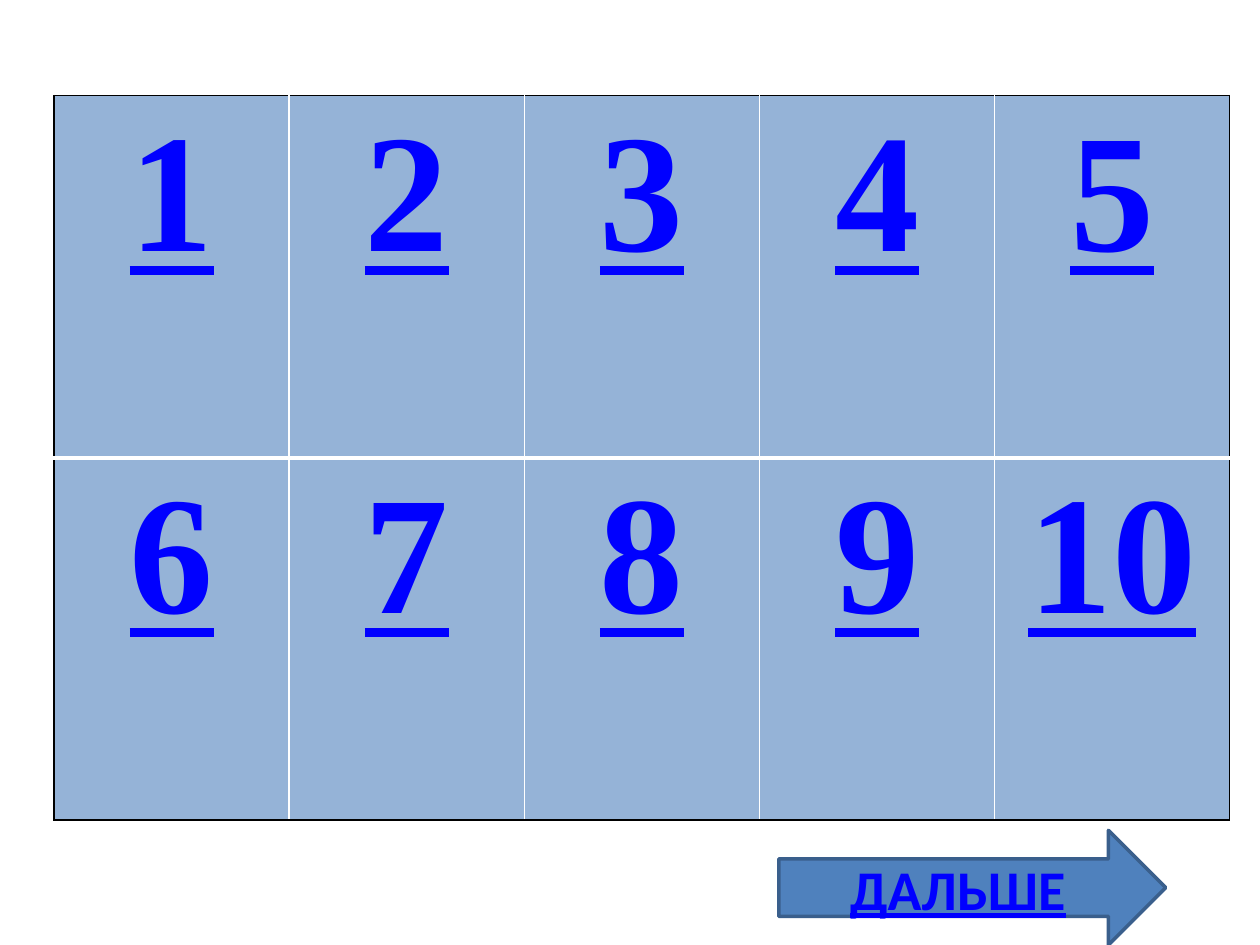
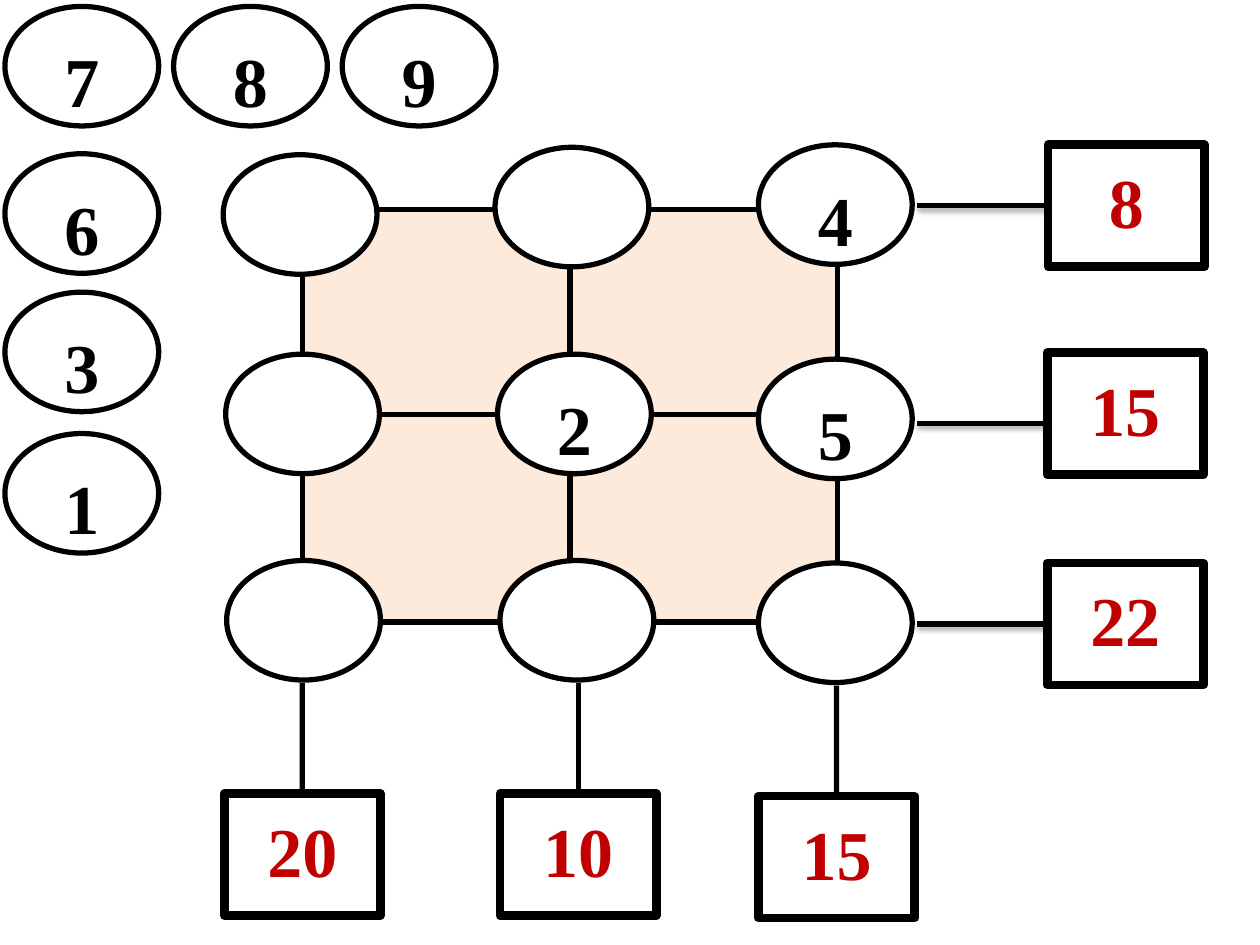
import pptx
import pptx.dml.color
import pptx.enum.shapes
import pptx.enum.text
import pptx.oxml
import pptx.oxml.ns
import pptx.util
from lxml import etree

Cm = pptx.util.Cm
Pt = pptx.util.Pt
Shape = pptx.enum.shapes.MSO_SHAPE
Anchor = pptx.enum.text.MSO_ANCHOR
qn = pptx.oxml.ns.qn

COLORS = {
    "black": "000000",
    "white": "FFFFFF",
    "link": "0000FF",
    "cell": "95B3D7",
    "arrow": "4F81BD",
    "arrow_edge": "3A5F8C",
    "tile": "FDEADA",
    "sum": "C00000",
}
SERIF = "Times New Roman"

# Sizes and places in centimetres: (left, top) and (width, height)
CIRCLE_SIZE = (3.1, 2.41)
BOX_SIZE = (3.15, 2.46)
TILE_SIZE = (5.38, 4.19)
GRID_CIRCLES = [
    ("", 4.5, 3.12), ("", 9.98, 2.97), ("4", 15.29, 2.92),
    ("", 4.55, 7.14), ("2", 10.03, 7.14), ("5", 15.29, 7.24),
    ("", 4.57, 11.3), ("", 10.08, 11.3), ("", 15.29, 11.35),
]
SPARE_TOP_ROW = "789"
SPARE_COLUMN = [("6", 3.1), ("3", 5.89), ("1", 8.74)]
# The last number is how far the line runs below the middle of the box
ROW_SUMS = [("8", 21.13, 2.92, 0), ("15", 21.11, 7.11, 0.19), ("22", 21.11, 11.35, 0)]
COLUMN_SUMS = [("20", 4.52, 16), ("10", 10.08, 16), ("15", 15.29, 16.05)]


def rgb(name):
    return pptx.dml.color.RGBColor.from_string(COLORS[name])


def write_text(frame, text, size=40, font=SERIF, color="black", underline=False):
    paragraph = frame.paragraphs[0]
    paragraph.alignment = pptx.enum.text.PP_ALIGN.CENTER
    run = paragraph.add_run()
    run.text = text
    run.font.name = font
    run.font.size = Pt(size)
    run.font.bold = True
    run.font.underline = underline
    run.font.color.rgb = rgb(color)


def add_figure(slide, kind, position, size, fill="white", edge="black", edge_width=3):
    shape = slide.shapes.add_shape(kind, *map(Cm, position + size))
    shape.shadow.inherit = False
    shape.fill.solid()
    shape.fill.fore_color.rgb = rgb(fill)
    shape.line.color.rgb = rgb(edge)
    shape.line.width = Pt(edge_width)
    return shape


def add_number(slide, kind, text, position, size, color="black", edge_width=3):
    """Draw a white figure with its number, if any, near the top."""
    shape = add_figure(slide, kind, position, size, edge_width=edge_width)
    if text:
        frame = shape.text_frame
        frame.vertical_anchor = Anchor.TOP
        frame.margin_top = Cm(0.28)
        frame.margin_bottom = 0
        write_text(frame, text, color=color)
    return shape


def add_circle(slide, text, left, top):
    return add_number(slide, Shape.OVAL, text, (left, top), CIRCLE_SIZE)


def add_sum_box(slide, text, left, top):
    return add_number(slide, Shape.RECTANGLE, text, (left, top), BOX_SIZE, "sum", 5)


def add_line(slide, begin, end, shadow=False):
    line = slide.shapes.add_connector(
        pptx.enum.shapes.MSO_CONNECTOR.STRAIGHT, *map(Cm, begin + end))
    line.line.color.rgb = rgb("black")
    line.line.width = Pt(3)
    effects = etree.SubElement(line._element.spPr, qn("a:effectLst"))
    if shadow:
        outer = etree.SubElement(effects, qn("a:outerShdw"), blurRad="40000",
                                 dist="23000", dir="5400000", rotWithShape="0")
        color = etree.SubElement(outer, qn("a:srgbClr"), val=COLORS["black"])
        etree.SubElement(color, qn("a:alpha"), val="35000")
    return line


def set_borders(cell, borders):
    """Set borders given as side: (color, points), sides in the order L, R, T, B."""
    properties = cell._tc.get_or_add_tcPr()
    for index, (side, (color, width)) in enumerate(borders.items()):
        border = etree.Element(qn(f"a:ln{side}"), w=str(Pt(width)))
        fill = etree.SubElement(border, qn("a:solidFill"))
        etree.SubElement(fill, qn("a:srgbClr"), val=COLORS[color])
        properties.insert(index, border)


def add_number_table(slide, rows=2, columns=5):
    table = slide.shapes.add_table(
        rows, columns, Cm(1.09), Cm(1.93), Cm(4.74 * columns), Cm(7.3 * rows)).table
    outer, inner, divider = ("black", 1), ("white", 1), ("white", 3)
    for row in range(rows):
        for column in range(columns):
            cell = table.cell(row, column)
            cell.fill.solid()
            cell.fill.fore_color.rgb = rgb("cell")
            set_borders(cell, {
                "L": outer if column == 0 else inner,
                "R": outer if column == columns - 1 else inner,
                "T": outer if row == 0 else divider,
                "B": outer if row == rows - 1 else divider,
            })
            write_text(cell.text_frame, str(row * columns + column + 1),
                       size=96, color="link", underline=True)


def add_next_arrow(slide):
    arrow = add_figure(slide, Shape.RIGHT_ARROW, (15.7, 16.74), (7.8, 2.31),
                       "arrow", "arrow_edge", 2)
    arrow.text_frame.vertical_anchor = Anchor.MIDDLE
    write_text(arrow.text_frame, "ДАЛЬШЕ", size=32, font="Calibri",
               color="link", underline=True)


def add_puzzle_grid(slide):
    for row in range(2):
        for column in range(2):
            add_figure(slide, Shape.RECTANGLE,
                       (6.1 + 5.4 * column, 4.22 + 4.13 * row), TILE_SIZE, "tile")
    for text, left, top in GRID_CIRCLES:
        add_circle(slide, text, left, top)


def add_sums(slide):
    for text, left, top, offset in ROW_SUMS:
        box = add_sum_box(slide, text, left, top)
        line_top = top + BOX_SIZE[1] / 2 + offset
        line = add_line(slide, (18.49, line_top), (left, line_top), shadow=True)
        if not offset:
            line.end_connect(box, 1)
    for text, left, top in COLUMN_SUMS:
        box = add_sum_box(slide, text, left, top)
        middle = left + BOX_SIZE[0] / 2
        line = add_line(slide, (middle, top - 2.23), (middle, top))
        line.end_connect(box, 0)


def add_spare_numbers(slide):
    for index, text in enumerate(SPARE_TOP_ROW):
        add_circle(slide, text, 0.1 + 3.4 * index, 0.13)
    for text, top in SPARE_COLUMN:
        add_circle(slide, text, 0.1, top)


def main():
    presentation = pptx.Presentation()
    presentation.slide_width = Cm(25.4)
    presentation.slide_height = Cm(19.05)
    blank = presentation.slide_layouts[6]

    menu = presentation.slides.add_slide(blank)
    add_number_table(menu)
    add_next_arrow(menu)

    puzzle = presentation.slides.add_slide(blank)
    add_puzzle_grid(puzzle)
    add_sums(puzzle)
    add_spare_numbers(puzzle)

    presentation.save("out.pptx")


if __name__ == "__main__":
    main()
